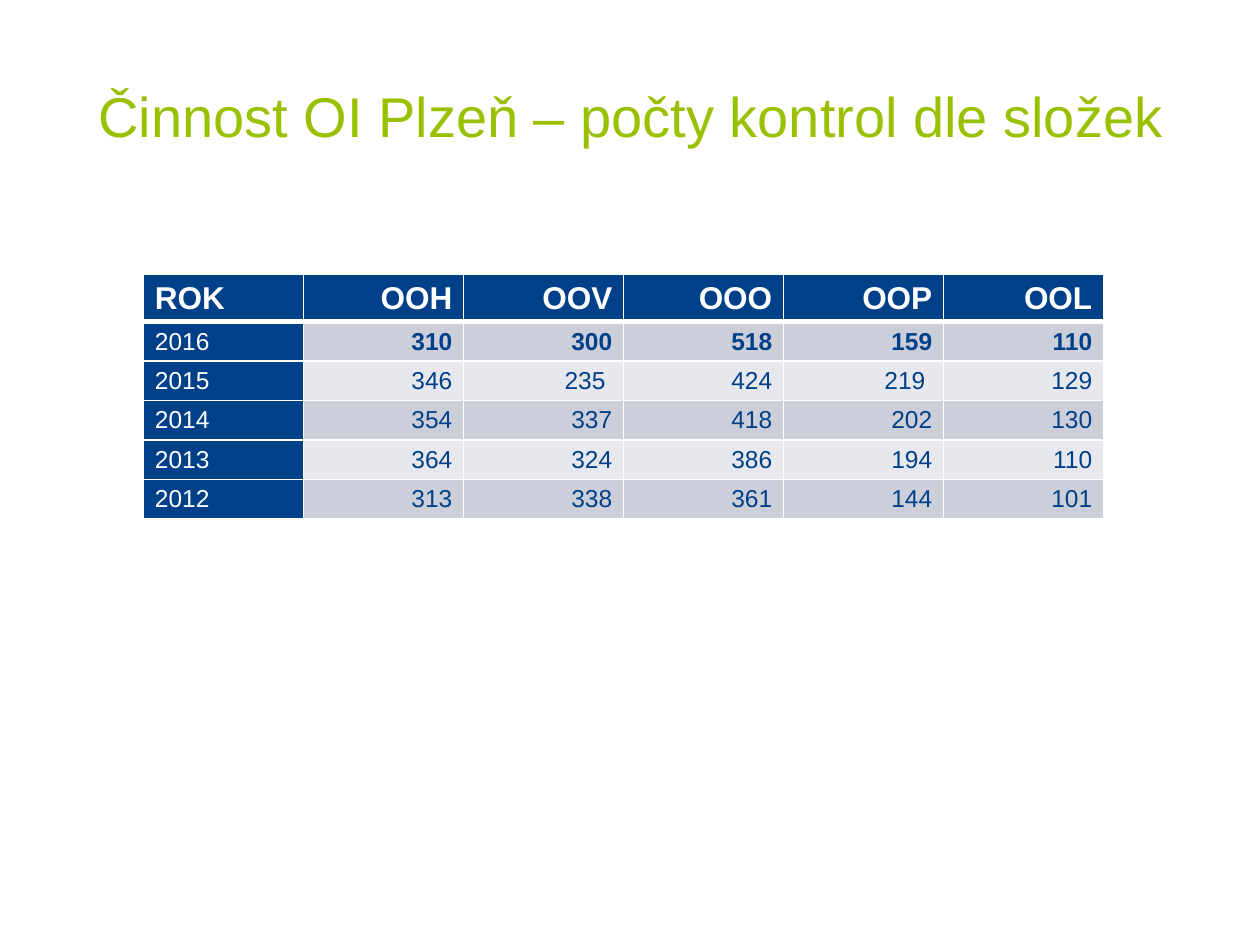
from pptx import Presentation
from pptx.dml.color import RGBColor
from pptx.enum.text import MSO_ANCHOR, PP_ALIGN
from pptx.oxml.ns import qn
from pptx.util import Inches, Pt
from lxml import etree

LEFT, CENTER, RIGHT = PP_ALIGN.LEFT, PP_ALIGN.CENTER, PP_ALIGN.RIGHT
MIDDLE = MSO_ANCHOR.MIDDLE

GREEN = RGBColor(0x99, 0xC1, 0x00)
BLUE = RGBColor(0x00, 0x40, 0x89)
WHITE = RGBColor(0xFF, 0xFF, 0xFF)
BANDS = (RGBColor(0xCC, 0xCF, 0xDA), RGBColor(0xE7, 0xE8, 0xED))

TITLE = "Činnost OI Plzeň – počty kontrol dle složek"
INSPECTIONS = (
    ("ROK", "OOH", "OOV", "OOO", "OOP", "OOL"),
    ("2016", "310", "300", "518", "159", "110"),
    ("2015", "346", "235 ", "424", "219 ", "129"),
    ("2014", "354", "337", "418", "202", "130"),
    ("2013", "364", "324", "386", "194", "110"),
    ("2012", "313", "338", "361", "144", "101"),
)
COLUMN_WIDTH, ROW_HEIGHT = Inches(1.27), Inches(0.3)
CELL_FORMAT = {
    "vertical_anchor": MIDDLE,
    "margin_left": Inches(0.09),
    "margin_right": Inches(0.09),
    "margin_top": Pt(3.4),
    "margin_bottom": Pt(3.4),
}


def set_attributes(target, values):
    for name, value in values.items():
        setattr(target, name, value)


def write_text(text_frame, text, alignment, size, color, bold=False):
    paragraph = text_frame.paragraphs[0]
    paragraph.alignment = alignment
    run = paragraph.add_run()
    run.text = text
    set_attributes(run.font, {"name": "Arial", "size": Pt(size), "bold": bold})
    run.font.color.rgb = color


def set_borders(cell, widths):
    """Draw white borders; widths maps the sides L, R, T and B to points."""
    properties = cell._tc.get_or_add_tcPr()
    for index, (side, width) in enumerate(widths.items()):
        line = etree.Element(qn(f"a:ln{side}"), w=str(Pt(width)))
        fill = etree.SubElement(line, qn("a:solidFill"))
        etree.SubElement(fill, qn("a:srgbClr"), val=str(WHITE))
        properties.insert(index, line)


def add_title(slide):
    title = slide.shapes.title
    set_attributes(title, {
        "left": Inches(0.51), "top": Inches(0.29),
        "width": Inches(9), "height": Inches(1.25),
    })
    set_attributes(title.text_frame, {"vertical_anchor": MIDDLE, "word_wrap": True})
    write_text(title.text_frame, TITLE, CENTER, 32, GREEN)


def format_cell(cell, text, row, column):
    is_header, is_year = row == 0, column == 0
    on_blue = is_header or is_year
    set_attributes(cell, CELL_FORMAT)
    cell.fill.solid()
    cell.fill.fore_color.rgb = BLUE if on_blue else BANDS[(row - 1) % 2]
    write_text(
        cell.text_frame, text,
        alignment=LEFT if is_year else RIGHT,
        size=18 if is_header else 14,
        color=WHITE if on_blue else BLUE,
        bold=is_header or (row == 1 and not is_year),
    )
    set_borders(cell, {"L": 1, "R": 1, "T": 3 if row == 1 else 1, "B": 3 if is_header else 1})


def add_inspection_table(slide):
    row_count, column_count = len(INSPECTIONS), len(INSPECTIONS[0])
    table = slide.shapes.add_table(
        row_count, column_count, Inches(1.14), Inches(2.18),
        COLUMN_WIDTH * column_count, ROW_HEIGHT * row_count,
    ).table
    for row, values in enumerate(INSPECTIONS):
        for column, text in enumerate(values):
            format_cell(table.cell(row, column), text, row, column)


def main():
    presentation = Presentation()
    set_attributes(presentation, {"slide_width": Inches(10), "slide_height": Inches(7.5)})
    slide = presentation.slides.add_slide(presentation.slide_layouts[5])
    add_title(slide)
    add_inspection_table(slide)
    presentation.save("out.pptx")


if __name__ == "__main__":
    main()
